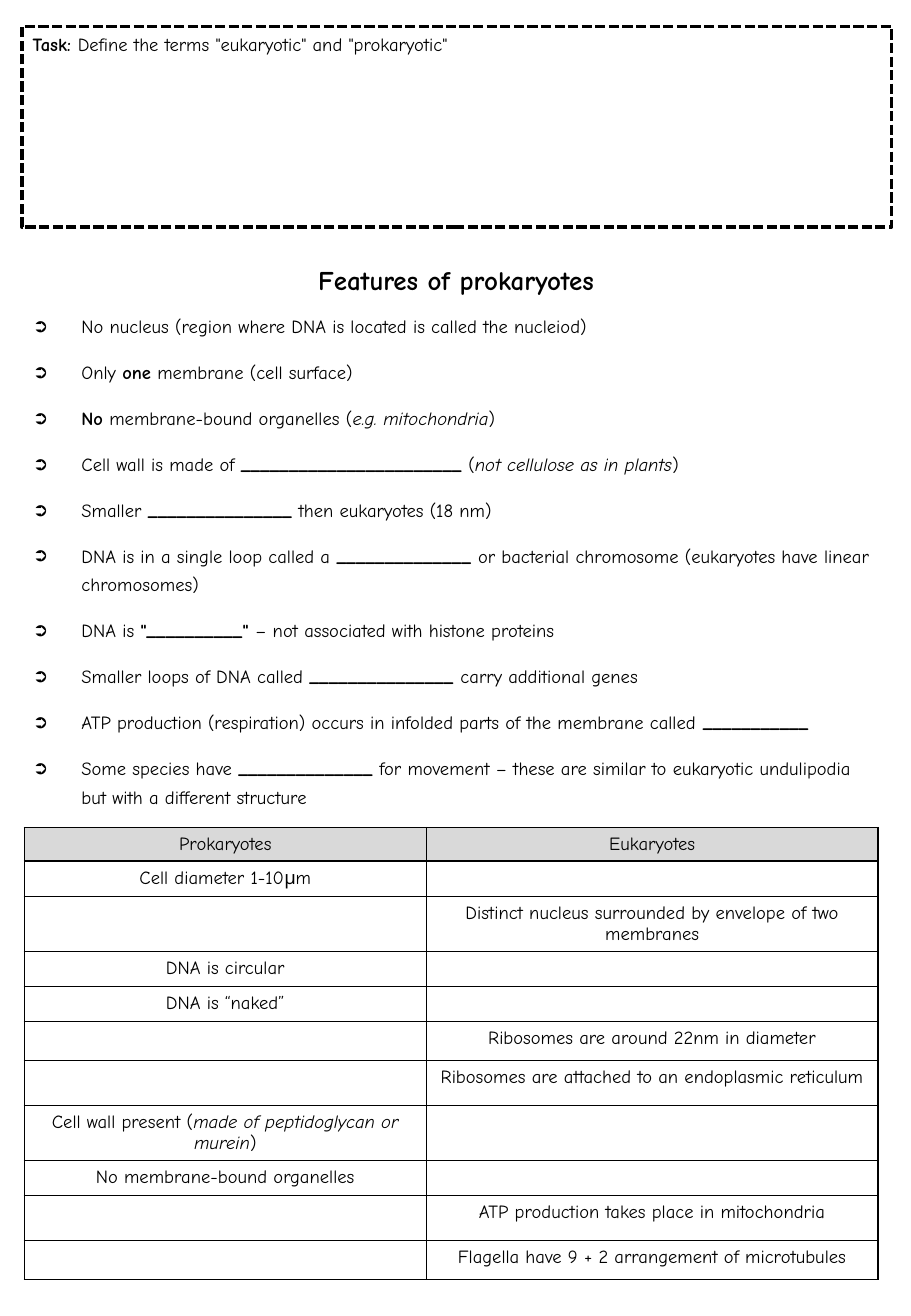
"""Build a worksheet page on the features of prokaryotes."""
from lxml import etree
from pptx import Presentation
from pptx.dml.color import RGBColor
from pptx.enum.dml import MSO_LINE
from pptx.enum.shapes import MSO_SHAPE
from pptx.enum.text import MSO_ANCHOR, MSO_AUTO_SIZE, PP_ALIGN
from pptx.oxml import parse_xml
from pptx.oxml.ns import nsdecls, qn
from pptx.util import Inches, Pt

RECT = MSO_SHAPE.RECTANGLE
DASH = MSO_LINE.SQUARE_DOT
TOP = MSO_ANCHOR.TOP
NO_FIT = MSO_AUTO_SIZE.NONE
LEFT, CENTER = PP_ALIGN.LEFT, PP_ALIGN.CENTER
FONT = "Comic Neue"
BLACK, WHITE, GREY = "000000", "FFFFFF", "D9D9D9"

FEATURES = [
    "No nucleus (region where DNA is located is called the nucleiod)",
    "Only |*one| membrane (cell surface)",
    "*No| membrane-bound organelles (|/e.g. mitochondria|)",
    "Cell wall is made of |*_______________________| (|/not cellulose as in plants|)",
    "Smaller|* _______________| then eukaryotes (18 nm)",
    "DNA is in a single loop called a |*______________ |"
    "or bacterial chromosome (eukaryotes have linear chromosomes)",
    'DNA is |*"__________" |– not associated with histone proteins',
    "Smaller loops of DNA called |*_______________ |carry additional genes",
    "ATP production (respiration) occurs in infolded parts of the membrane called |*___________",
    "Some species have |*______________| for movement – these are similar to "
    "eukaryotic undulipodia but with a different structure",
]
ROWS = [
    (0.27, "Prokaryotes", "Eukaryotes"),
    (0.27, "Cell diameter 1-10μm", ""),
    (0.37, "", "Distinct nucleus surrounded by envelope of two membranes"),
    (0.27, "DNA is circular", ""),
    (0.27, "DNA is “naked”", ""),
    (0.32, "", "Ribosomes are around 22nm in diameter"),
    (0.37, "", "Ribosomes are attached to an endoplasmic reticulum"),
    (0.37, "Cell wall present (|/made of peptidoglycan or murein|)", ""),
    (0.27, "No membrane-bound organelles", ""),
    (0.37, "", "ATP production takes place in mitochondria"),
    (0.32, "", "Flagella have 9 + 2 arrangement of microtubules"),
]
COLS = (3.31, 3.72)


def rgb(color):
    """Turn a hex string into a colour."""
    return RGBColor.from_string(color)


def write(p, text, size=11, align=LEFT):
    """Fill a paragraph; | parts runs, a leading * is bold and / italic."""
    p.alignment = align
    for part in text.split("|") if text else []:
        r = p.add_run()
        r.text = part.lstrip("*/")
        fmt = {"name": FONT, "size": Pt(size),
               "bold": part.startswith("*"), "italic": part.startswith("/")}
        for key, value in fmt.items():
            setattr(r.font, key, value)
        r.font.color.rgb = rgb(BLACK)


prs = Presentation()
prs.slide_width, prs.slide_height = Inches(7.5), Inches(10.83)
s = prs.slides.add_slide(prs.slide_layouts[1])
title, body = s.shapes.title, s.placeholders[1]

sp = s.shapes.add_shape(RECT, Inches(0.18), Inches(0.22), Inches(7.16), Inches(1.65))
sp.shadow.inherit = False
sp.fill.solid()
sp.fill.fore_color.rgb = rgb(WHITE)
sp.line.color.rgb = rgb(BLACK)
sp.line.width = Pt(2)
sp.line.dash_style = DASH

task = s.shapes.add_textbox(0, 0, 0, 0)
for sp, box in (
    (task, (0.17, 0.22, 7.06, 0.29)),
    (title, (0.17, 2.12, 7.17, 0.37)),
    (body, (0.17, 2.49, 7.19, 4.32)),
):
    sp.left, sp.top, sp.width, sp.height = map(Inches, box)
    for key, value in {"word_wrap": True, "auto_size": NO_FIT, "vertical_anchor": TOP}.items():
        setattr(sp.text_frame, key, value)

write(task.text_frame.paragraphs[0], '*Task: |Define the terms "eukaryotic" and "prokaryotic"')
write(title.text_frame.paragraphs[0], "*Features of prokaryotes", 16, CENTER)

tf = body.text_frame
for i, feature in enumerate(FEATURES):
    p = tf.add_paragraph() if i else tf.paragraphs[0]
    write(p, feature)
    p.line_spacing = 1.3
    p.space_before = Pt(10)
    pPr = p._p.get_or_add_pPr()
    pPr.set("marL", str(Inches(0.4)))
    pPr.set("indent", str(Inches(-0.4)))
    etree.SubElement(pPr, qn("a:buChar")).set("char", "➲")

height = sum(row[0] for row in ROWS)
table = s.shapes.add_table(len(ROWS), len(COLS), Inches(0.2), Inches(6.81),
                           Inches(sum(COLS)), Inches(height)).table
table.first_row = table.horz_banding = False
for col, width in zip(table.columns, COLS):
    col.width = Inches(width)
for i, (row_height, *texts) in enumerate(ROWS):
    table.rows[i].height = Inches(row_height)
    for j, text in enumerate(texts):
        cell = table.cell(i, j)
        p = cell.text_frame.paragraphs[0]
        write(p, text, align=CENTER)
        if not text:
            etree.SubElement(p._p, qn("a:endParaRPr")).set("sz", "1100")
        for side in "LRTB":
            cell._tc.get_or_add_tcPr().append(parse_xml(
                f'<a:ln{side} {nsdecls("a")} w="{Pt(1)}"><a:solidFill>'
                f'<a:srgbClr val="{BLACK}"/></a:solidFill></a:ln{side}>'))
        cell.fill.solid()
        cell.fill.fore_color.rgb = rgb(WHITE if i else GREY)

prs.save("out.pptx")
